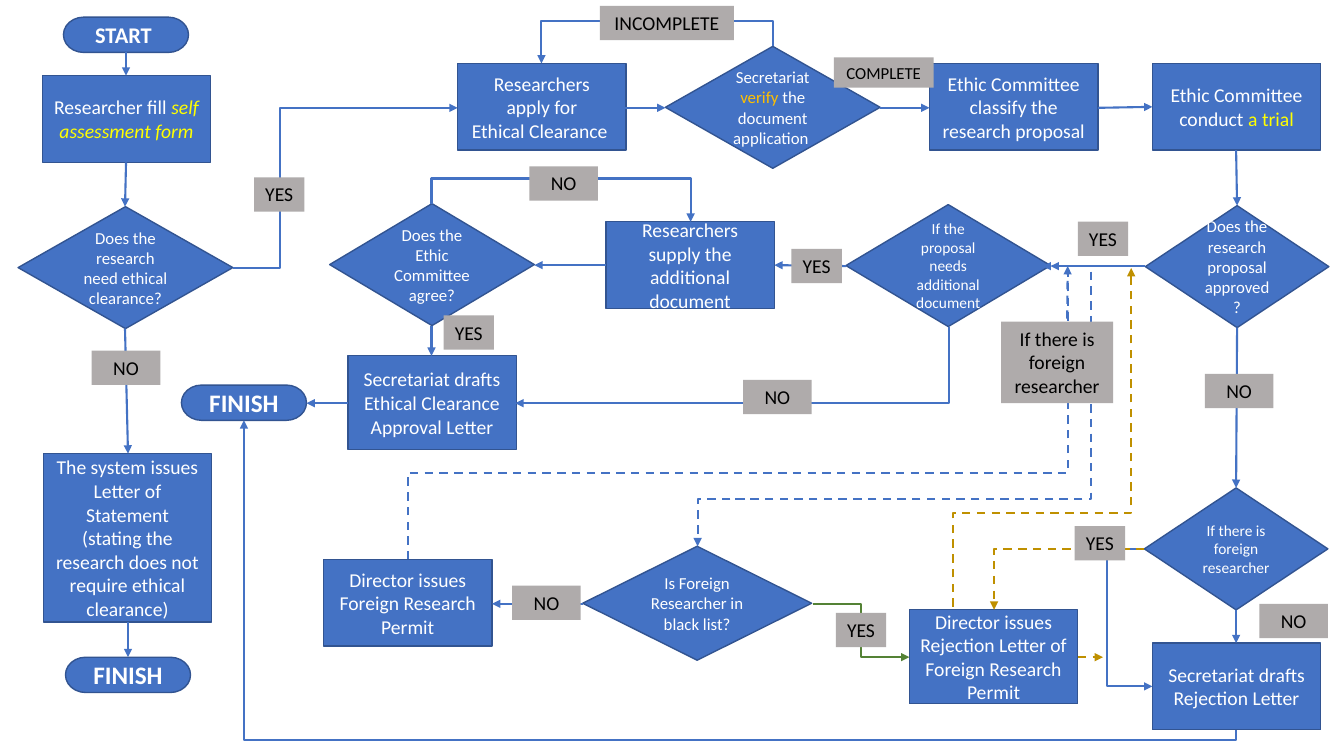
import pptx
import pptx.util
import pptx.dml.color
import pptx.enum.dml
import pptx.enum.shapes
import pptx.enum.text
import pptx.oxml.ns
from lxml import etree

RGBColor = pptx.dml.color.RGBColor
Shape = pptx.enum.shapes.MSO_SHAPE
Connector = pptx.enum.shapes.MSO_CONNECTOR
Anchor = pptx.enum.text.MSO_ANCHOR
qn = pptx.oxml.ns.qn

PX = 9144  # one px is a hundredth of an inch
FONT = "Calibri"
BLUE = RGBColor(0x44, 0x72, 0xC4)
OUTLINE = RGBColor(0x32, 0x54, 0x91)
GREY = RGBColor(0xAF, 0xAB, 0xAB)
GOLD = RGBColor(0xBF, 0x90, 0x00)
GREEN = RGBColor(0x54, 0x82, 0x35)
AMBER = RGBColor(0xFF, 0xC0, 0x00)
YELLOW = RGBColor(0xFF, 0xFF, 0x00)
WHITE = RGBColor(0xFF, 0xFF, 0xFF)
BLACK = RGBColor(0, 0, 0)

# Steps: left, top, height, paragraphs (a run is plain text or text, colour, italic)
STEPS = [
    (42, 75, 86, [["Researcher fill ", ("self assessment form", YELLOW, True)]]),
    (454, 63, 86, [["Researchers"], ["apply for"], ["Ethical Clearance "]]),
    (922, 63, 86, [["Ethic Committee classify the research proposal"]]),
    (1143, 63, 86, [["Ethic Committee conduct ", ("a trial", YELLOW, False)]]),
    (601, 220, 86, [["Researchers supply the additional document"]]),
    (345, 353, 93, [["Secretariat drafts Ethical Clearance Approval Letter"]]),
    (321, 555, 86, [["Director issues Foreign Research Permit"]]),
    (902, 605, 93, [["Director issues Rejection Letter of Foreign Research Permit"]]),
    (1143, 638, 86, [["Secretariat drafts Rejection Letter"]]),
    (43, 450, 167, [["The system issues Letter of Statement"],
                    ["(stating the research does not require ethical clearance)"]]),
]

# Decisions: left, top, width, height, text size, paragraphs
DECISIONS = [
    (660, 46, 213, 121, 12, [["Secretariat"], [("verify ", AMBER, False),
                                               "the document application "]]),
    (1136, 204, 182, 121, 12, [["Does the research proposal approved?"]]),
    (839, 203, 203, 121, 11, [["If the proposal needs additional document"]]),
    (578, 542, 227, 113, 12, [["Is Foreign Researcher in black list?"]]),
    (18, 205, 213, 121, 12, [["Does the research need ethical clearance?"]]),
    (1135, 484, 182, 121, 11, [["If there is foreign researcher"]]),
    (327, 202, 203, 121, 12, [["Does the Ethic Committee agree?"]]),
]

# Terminators: left, top, text size, text
TERMINATORS = [(63, 17, 16, "START "), (180, 382, 18, "FINISH"), (65, 652, 18, "FINISH")]

# Answers: left, top
YES_PLACES = [(1069, 220), (785, 247), (252, 176), (440, 313), (1066, 522), (829, 608)]
NO_PLACES = [(1195, 371), (737, 377), (1249, 599), (525, 165), (508, 581), (91, 348)]

# Routes: corner points from start to end
SOLID_ROUTES = [
    [(125, 161), (124, 205)],
    [(125, 52), (125, 75)],
    [(620, 107), (660, 107)],
    [(767, 46), (767, 21), (537, 21), (537, 63)],
    [(873, 107), (922, 107)],
    [(1226, 149), (1227, 204)],
    [(1227, 325), (1226, 484)],
    [(1226, 605), (1226, 638)],
    [(941, 324), (941, 400), (511, 400)],
    [(231, 266), (278, 266), (278, 107), (454, 107)],
    [(1089, 107), (1143, 106)],
    [(1136, 264), (1042, 264)],
    [(839, 264), (768, 263)],
    [(601, 263), (530, 263)],
    [(428, 202), (428, 177), (685, 177), (685, 220)],
    [(578, 599), (488, 599)],
    [(428, 323), (428, 353)],
    [(345, 400), (304, 400)],
    [(1226, 724), (1226, 734), (242, 734), (242, 417)],
    [(1135, 545), (1098, 545), (1098, 681), (1143, 681)],
    [(124, 326), (127, 450)],
    [(127, 617), (127, 652)],
]
PERMIT_ROUTES = [
    [(739, 495), (692, 495), (692, 542)],
    [(405, 555), (405, 469), (1059, 469), (1059, 264), (1034, 264)],
    [(1058, 360), (1059, 264)],
]
REJECTION_ROUTES = [
    [(1135, 545), (986, 545), (986, 605)],
    [(1069, 652), (1094, 652)],
    [(945, 602), (945, 509), (1122, 509), (1122, 266)],
]
BLACKLIST_CHECK = [(1091, 264), (1082, 264), (1082, 495), (726, 495)]
BLACKLISTED = [(806, 599), (854, 599), (854, 652), (902, 652)]


def write_text(shape, paragraphs, size=14, color=WHITE, bold=False, anchor=Anchor.MIDDLE):
    frame = shape.text_frame
    frame.word_wrap = True
    frame.vertical_anchor = anchor
    for index, runs in enumerate(paragraphs):
        paragraph = frame.paragraphs[0] if index == 0 else frame.add_paragraph()
        paragraph.alignment = pptx.enum.text.PP_ALIGN.CENTER
        for item in runs:
            words, tint, italic = (item, color, False) if isinstance(item, str) else item
            run = paragraph.add_run()
            run.text = words
            run.font.name = FONT
            run.font.size = pptx.util.Pt(size)
            run.font.bold = bold
            run.font.italic = italic
            run.font.color.rgb = tint


def add_node(slide, preset, left, top, width, height, fill=BLUE, outline=OUTLINE):
    node = slide.shapes.add_shape(preset, left * PX, top * PX, width * PX, height * PX)
    node.shadow.inherit = False
    node.fill.solid()
    node.fill.fore_color.rgb = fill
    if outline is None:
        node.line.fill.background()
    else:
        node.line.color.rgb = outline
        node.line.width = pptx.util.Pt(1)
    return node


def add_label(slide, left, top, width, height, words, size=14):
    label = add_node(slide, Shape.RECTANGLE, left, top, width, height, GREY, None)
    write_text(label, [[words]], size=size, color=BLACK, anchor=Anchor.TOP)
    label.text_frame.auto_size = pptx.enum.text.MSO_AUTO_SIZE.SHAPE_TO_FIT_TEXT


def add_route(slide, points, color=BLUE, dashed=False, arrow=True):
    (x1, y1), (x2, y2) = start, end = points[0], points[-1]
    segments = len(points) - 1
    upright = segments > 1 and points[1][0] == x1
    if upright:
        # An elbow that leaves vertically is a horizontal one turned by 90 degrees
        mid_x, mid_y = (x1 + x2) / 2, (y1 + y2) / 2
        half_run, half_rise = (y2 - y1) / 2, (x1 - x2) / 2
        x1, x2 = mid_x - half_run, mid_x + half_run
        y1, y2 = mid_y - half_rise, mid_y + half_rise
    kind = Connector.STRAIGHT if segments == 1 else Connector.ELBOW
    route = slide.shapes.add_connector(kind, *(round(v * PX) for v in (x1, y1, x2, y2)))
    properties = route._element.spPr
    if upright:
        properties.find(qn("a:xfrm")).set("rot", "5400000")
    if segments > 1:
        geometry = properties.find(qn("a:prstGeom"))
        geometry.set("prst", f"bentConnector{segments}")
        guides = geometry.find(qn("a:avLst"))
        for number in range(1, segments - 1):
            axis = (number - 1 + upright) % 2
            share = (points[number][axis] - start[axis]) / (end[axis] - start[axis])
            etree.SubElement(guides, qn("a:gd"), name=f"adj{number}" if segments > 3 else "adj1",
                             fmla=f"val {round(share * 100000)}")
    route.line.color.rgb = color
    route.line.width = pptx.util.Pt(1.5)
    if dashed:
        route.line.dash_style = pptx.enum.dml.MSO_LINE.DASH
    if arrow:
        etree.SubElement(properties.find(qn("a:ln")), qn("a:tailEnd"), type="triangle")
    etree.SubElement(properties, qn("a:effectLst"))


def main():
    deck = pptx.Presentation()
    deck.slide_width, deck.slide_height = 1333 * PX, 750 * PX
    slide = deck.slides.add_slide(deck.slide_layouts[6])

    # Steps, decisions and ends
    for left, top, height, paragraphs in STEPS:
        write_text(add_node(slide, Shape.FLOWCHART_PROCESS, left, top, 167, height), paragraphs)
    for left, top, width, height, size, paragraphs in DECISIONS:
        decision = add_node(slide, Shape.FLOWCHART_DECISION, left, top, width, height)
        write_text(decision, paragraphs, size=size)
    for left, top, size, words in TERMINATORS:
        terminator = add_node(slide, Shape.FLOWCHART_TERMINATOR, left, top, 124, 35)
        write_text(terminator, [[words]], size=size, bold=True)

    # Routes
    for points in SOLID_ROUTES:
        add_route(slide, points)
    add_route(slide, BLACKLIST_CHECK, dashed=True, arrow=False)
    for points in PERMIT_ROUTES:
        add_route(slide, points, dashed=True)
    for points in REJECTION_ROUTES:
        add_route(slide, points, color=GOLD, dashed=True)
    add_route(slide, BLACKLISTED, color=GREEN)

    # Answers on the routes
    for left, top in YES_PLACES:
        add_label(slide, left, top, 50, 34, "YES")
    for left, top in NO_PLACES:
        add_label(slide, left, top, 68, 34, "NO")
    add_label(slide, 595, 6, 133, 34, "INCOMPLETE")
    add_label(slide, 827, 57, 99, 30, "COMPLETE", size=12)
    add_label(slide, 993, 319, 111, 81, "If there is foreign researcher")

    deck.save("out.pptx")


if __name__ == "__main__":
    main()
